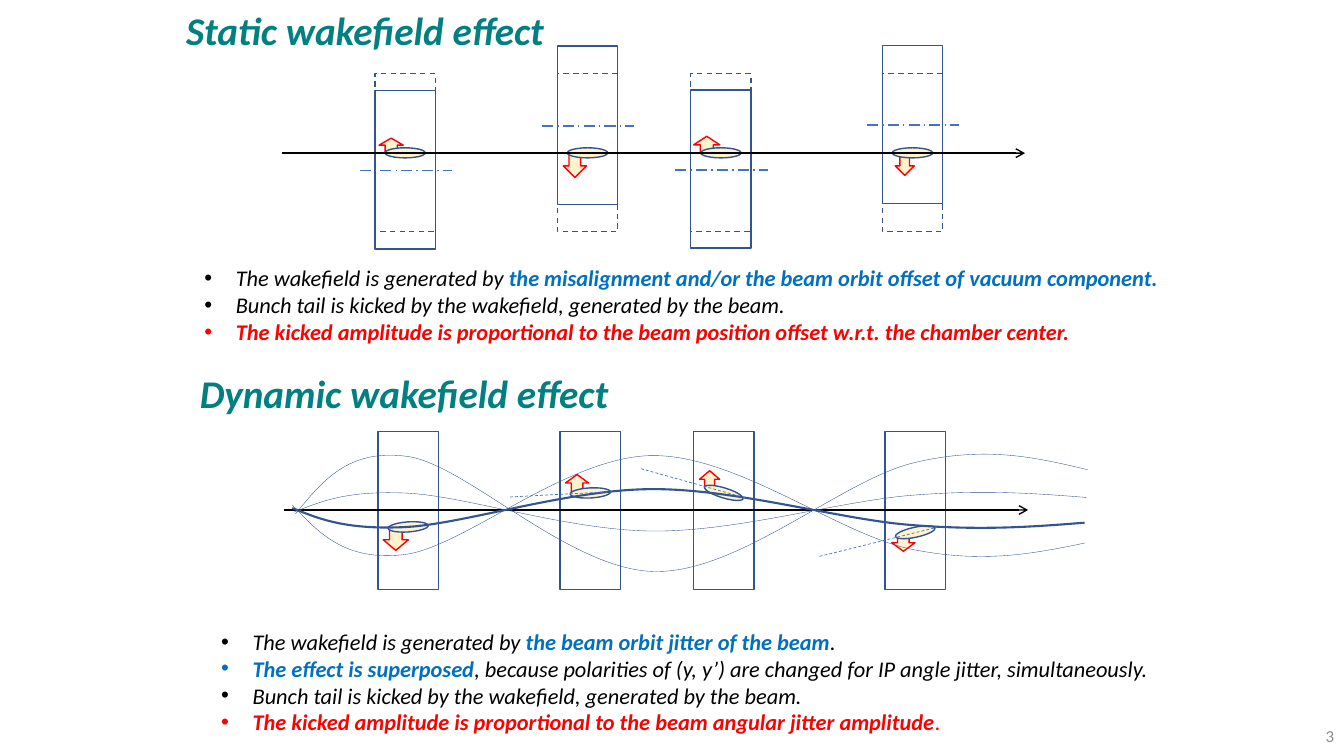
from lxml import etree
from pptx import Presentation
from pptx.dml.color import RGBColor
from pptx.enum.dml import MSO_LINE
from pptx.enum.shapes import MSO_CONNECTOR, MSO_SHAPE
from pptx.enum.text import MSO_ANCHOR, MSO_AUTO_SIZE, PP_ALIGN
from pptx.oxml.ns import qn
from pptx.util import Pt

RECT, OVAL, ARROW = MSO_SHAPE.RECTANGLE, MSO_SHAPE.OVAL, MSO_SHAPE.DOWN_ARROW
DASH, CENTER_DASH = MSO_LINE.DASH, MSO_LINE.LONG_DASH_DOT
STRAIGHT = MSO_CONNECTOR.STRAIGHT
NAVY, BLUE, RED, BLACK, CREAM = "325491", "4472C4", "FF0000", "000000", "FFF2CC"
CHAMBER_W, CHAMBER_H = 43.2, 113
BUNCH_W, BUNCH_H = 28.8, 7.2
UP, DOWN = True, False

PLAIN = {"size": Pt(16), "italic": True, "bold": False, "color": BLACK}
STRONG = {**PLAIN, "bold": True, "color": "0070C0"}
ALERT = {**STRONG, "color": RED}
HEADING = {"size": Pt(28), "italic": True, "bold": True, "color": "008080"}
NUMBER = {"size": Pt(12), "color": "8C8C8C"}

# chamber left, solid chamber top, kick (direction, left, top, width, height)
STATIC_CHAMBERS = [
    (267.8, 64.8, (UP, 270.8, 98.7, 17.3, 10.1)),
    (398.1, 33, (DOWN, 402.3, 110.2, 16.6, 16.6)),
    (493.4, 64.3, (UP, 495.5, 97.4, 18.7, 12.2)),
    (630.2, 32.4, (DOWN, 639.4, 110.2, 13.7, 15.1)),
]
# chamber left, kick, bunch top, bunch rotation
DYNAMIC_CHAMBERS = [
    (270, (DOWN, 273.7, 378, 18, 15.1), 372.8, 356),
    (400.1, (UP, 403.9, 339, 16.6, 12.2), 348.5, 357),
    (495.4, (UP, 499.7, 336.3, 14.4, 12.2), 348.5, 17),
    (632.2, (DOWN, 637, 381.6, 16.6, 12.2), 376.6, 348),
]
# cubic control points of one orbit, relative to its start
ORBIT = [
    (0, 0), (19.4, -23.8), (38.2, -47.5), (81.4, -41), (123.8, -33.8),
    (196.6, 40.3), (257, 41), (317.5, 41.8), (390.2, -24.5), (442.1, -36.7),
    (493.2, -49), (529.9, -40.3), (565.9, -31.7),
]
# start x, start y, amplitude factor, line width
ORBITS = [
    (211, 367.2, 1, 0.25),
    (210.2, 365.8, 0.33, 0.25),
    (208.8, 360.7, -0.86, 0.25),
    (208.8, 362.9, -0.33, 1.5),
]
BUNCH_AXES = [
    (364.3, 355, 433.4, 351.4),
    (457.9, 334.8, 532.8, 355.7),
    (585.4, 397.4, 669.6, 376.6),
]
STATIC_NOTES = [
    [("The wakefield is generated by ", PLAIN),
     ("the misalignment and/or the beam orbit offset of vacuum component.", STRONG)],
    [("Bunch tail is kicked by the wakefield, generated by the beam.", PLAIN)],
    [("The kicked amplitude is proportional to the beam position offset "
      "w.r.t. the chamber center.", ALERT)],
]
DYNAMIC_NOTES = [
    [("The wakefield is generated by ", PLAIN),
     ("the beam orbit jitter of the beam", STRONG), (".", PLAIN)],
    [("The effect is superposed", STRONG),
     (", because polarities of (y, y’) are changed for IP angle jitter, "
      "simultaneously.", PLAIN)],
    [("Bunch tail is kicked by the wakefield, generated by the beam.", PLAIN)],
    [("The kicked amplitude is proportional to the beam angular jitter amplitude",
      ALERT), (".", {**PLAIN, "color": RED})],
]


def rgb(color):
    return RGBColor.from_string(color)


def style_line(line, color, width, dash=None):
    line.color.rgb = rgb(color)
    line.width = Pt(width)
    if dash is not None:
        line.dash_style = dash


def add_figure(shapes, kind, x, y, w, h, color=NAVY, fill=None, dash=None, rotation=0):
    sp = shapes.add_shape(kind, Pt(x), Pt(y), Pt(w), Pt(h))
    sp.shadow.inherit = False
    if rotation:
        sp.rotation = rotation
    if fill:
        sp.fill.solid()
        sp.fill.fore_color.rgb = rgb(fill)
    else:
        sp.fill.background()
    style_line(sp.line, color, 1, dash)
    return sp


def add_kick(shapes, upward, x, y, w, h):
    sp = add_figure(shapes, ARROW, x, y, w, h, color=RED, fill=CREAM)
    if upward:
        sp._element.spPr.find(qn("a:xfrm")).set("flipV", "1")


def add_bunch(shapes, x, y, rotation=0):
    add_figure(shapes, OVAL, x, y, BUNCH_W, BUNCH_H, fill=CREAM, rotation=rotation)


def add_line(shapes, x1, y1, x2, y2, color, width, dash=None, arrow=False):
    cn = shapes.add_connector(STRAIGHT, Pt(x1), Pt(y1), Pt(x2), Pt(y2))
    style_line(cn.line, color, width, dash)
    sp_pr = cn._element.spPr
    if arrow:
        etree.SubElement(sp_pr.find(qn("a:ln")), qn("a:tailEnd"), type="arrow")
    etree.SubElement(sp_pr, qn("a:effectLst"))


def add_orbit(shapes, x, y, factor, width):
    """Join every third point, then bend each segment into a cubic curve."""
    points = [(Pt(x + dx), Pt(y + factor * dy)) for dx, dy in ORBIT]
    builder = shapes.build_freeform(*points[0])
    builder.add_line_segments(points[3::3], close=False)
    sp = builder.convert_to_shape()
    sp.shadow.inherit = False
    sp.fill.background()
    style_line(sp.line, NAVY, width)
    for i, segment in enumerate(list(sp._element.iter(qn("a:lnTo")))):
        segment.tag = qn("a:cubicBezTo")
        for n, (px, py) in enumerate(points[3 * i + 1:3 * i + 3]):
            pt = etree.Element(qn("a:pt"), x=str(px - sp.left), y=str(py - sp.top))
            segment.insert(n, pt)


def add_bullet(p, color):
    p_pr = p._p.get_or_add_pPr()
    p_pr.set("marL", str(Pt(22.5)))
    p_pr.set("indent", str(Pt(-22.5)))
    bu_clr = etree.SubElement(p_pr, qn("a:buClr"))
    etree.SubElement(bu_clr, qn("a:srgbClr"), val=color)
    etree.SubElement(p_pr, qn("a:buFont"), typeface="Arial")
    etree.SubElement(p_pr, qn("a:buChar"), char="•")


def add_text(s, x, y, w, h, paragraphs, bullets=False, wrap=False):
    """Add a text box; each paragraph is a list of (text, format) runs."""
    tf = s.shapes.add_textbox(Pt(x), Pt(y), Pt(w), Pt(h)).text_frame
    tf.word_wrap = wrap
    tf.auto_size = MSO_AUTO_SIZE.NONE if wrap else MSO_AUTO_SIZE.SHAPE_TO_FIT_TEXT
    for i, runs in enumerate(paragraphs):
        p = tf.add_paragraph() if i else tf.paragraphs[0]
        if bullets:
            add_bullet(p, runs[0][1]["color"])
        for text, style in runs:
            r = p.add_run()
            r.text = text
            r.font.name = "Calibri"
            for name, value in style.items():
                if name == "color":
                    r.font.color.rgb = rgb(value)
                else:
                    setattr(r.font, name, value)
    return tf


def draw_static(shapes):
    for x, top, kick in STATIC_CHAMBERS:
        add_figure(shapes, RECT, x, 52.6, CHAMBER_W, CHAMBER_H, fill="FFFFFF", dash=DASH)
        add_figure(shapes, RECT, x, top, CHAMBER_W, CHAMBER_H)
        middle = top + 57
        add_line(shapes, x - 11, middle, x + 55, middle, BLUE, 1, CENTER_DASH)
        add_kick(shapes, *kick)
        add_bunch(shapes, x + 7.2, 105.6)


def draw_dynamic(shapes):
    for x, *_ in DYNAMIC_CHAMBERS:
        add_figure(shapes, RECT, x, 308.3, CHAMBER_W, CHAMBER_H)
    add_line(shapes, 203, 364.3, 734.4, 364.3, BLACK, 1, arrow=True)
    for x, kick, top, rotation in DYNAMIC_CHAMBERS:
        add_kick(shapes, *kick)
        add_bunch(shapes, x + 7.2, top, rotation)
    for orbit in ORBITS:
        add_orbit(shapes, *orbit)
    for axis in BUNCH_AXES:
        add_line(shapes, *axis, BLUE, 0.5, DASH)


def main():
    prs = Presentation()
    prs.slide_width, prs.slide_height = Pt(960), Pt(540)
    s = prs.slides.add_slide(prs.slide_layouts[6])
    draw_static(s.shapes.add_group_shape().shapes)
    add_line(s.shapes, 201.2, 109.4, 732.2, 109.4, BLACK, 1, arrow=True)
    add_text(s, 138.8, 185.4, 706.3, 65.5, STATIC_NOTES, bullets=True)
    add_text(s, 125.8, 0.7, 274.3, 41, [[("Static wakefield effect", HEADING)]])
    add_text(s, 135.6, 260, 311, 41, [[("Dynamic wakefield effect", HEADING)]])
    add_text(s, 150.9, 445, 686.2, 85, DYNAMIC_NOTES, bullets=True)
    tf = add_text(s, 798, 511.2, 162, 28.8, [[("3", NUMBER)]], wrap=True)
    tf.vertical_anchor = MSO_ANCHOR.MIDDLE
    tf.paragraphs[0].alignment = PP_ALIGN.RIGHT
    draw_dynamic(s.shapes.add_group_shape().shapes)
    prs.save("out.pptx")


if __name__ == "__main__":
    main()
